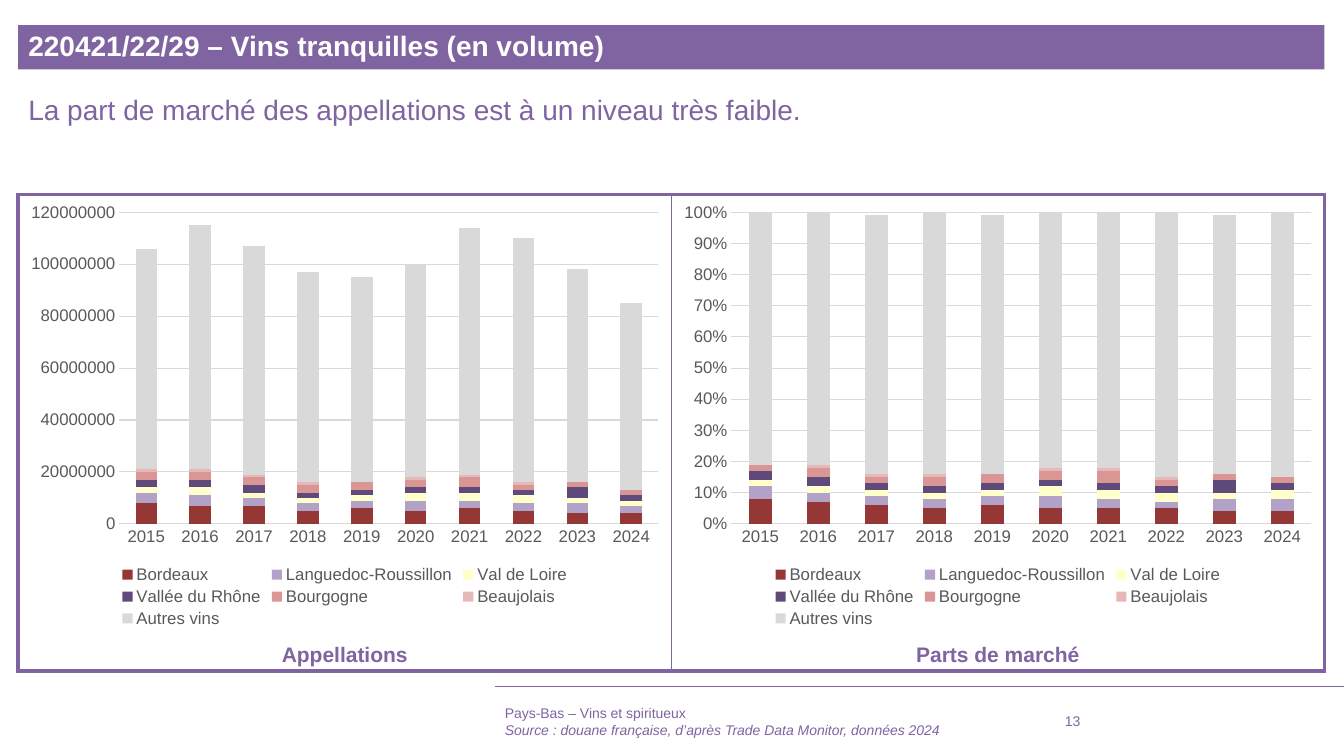
from lxml.etree import SubElement
from pptx import Presentation
from pptx.chart.data import CategoryChartData as ChartData
from pptx.dml.color import RGBColor
from pptx.enum.chart import XL_CHART_TYPE as ChartType, XL_LEGEND_POSITION as LegendPosition, XL_TICK_MARK as TickMark
from pptx.enum.shapes import MSO_CONNECTOR as Connector
from pptx.enum.text import MSO_ANCHOR as Anchor, MSO_AUTO_SIZE as AutoSize, PP_ALIGN as Align
from pptx.oxml.ns import qn
from pptx.util import Pt


class Theme:
    font = "Arial"
    purple = RGBColor.from_string("8064A2")
    white = RGBColor.from_string("FFFFFF")
    axis_text = RGBColor.from_string("595959")
    grid = RGBColor.from_string("D9D9D9")
    heading, caption, chart, footer = Pt(20), Pt(15), Pt(12), Pt(10)


def set_font(font, size, color, bold=False):
    font.name, font.size, font.bold = Theme.font, size, bold
    font.color.rgb = color


def write(box, place, lines, size, color, bold=False, align=Align.LEFT, anchor=Anchor.MIDDLE):
    box.left, box.top, box.width, box.height = (Pt(value) for value in place)
    frame = box.text_frame
    frame.text = "\n".join(lines)
    frame.word_wrap = True
    frame.auto_size = AutoSize.NONE
    frame.vertical_anchor = anchor
    for para in frame.paragraphs:
        para.alignment = align
        for span in para.runs:
            set_font(span.font, size, color, bold)
    return frame


LEFT, TOP, HALF = 13, 139, 466.5
FRAME_HEIGHT, CHART_HEIGHT = 340.5, 312
FOOTER_LEFT, FOOTER_TOP, FOOTER_HEIGHT = 353.5, 500.5, 29

deck = Presentation()
deck.slide_width, deck.slide_height = Pt(960), Pt(540)
page = deck.slides.add_slide(deck.slide_layouts[1])

title = page.shapes.title
title.fill.solid()
title.fill.fore_color.rgb = Theme.purple
title_frame = write(title, (LEFT, 18, 2 * HALF, 31.5), ["220421/22/29 – Vins tranquilles (en volume)"],
                    Theme.heading, Theme.white, bold=True)
message_frame = write(page.placeholders[1], (LEFT, 65, 2 * HALF, 58),
                      ["La part de marché des appellations est à un niveau très faible."],
                      Theme.heading, Theme.purple, anchor=Anchor.TOP)
for frame in (title_frame, message_frame):
    para = frame.paragraphs[0]
    para.line_spacing = 0.9
    para.space_before = Pt(0)
properties = message_frame.paragraphs[0]._p.get_or_add_pPr()
properties.set("marL", "0")
properties.set("indent", "0")
SubElement(properties, qn("a:buNone"))

rule = page.shapes.add_connector(Connector.STRAIGHT, Pt(960), Pt(490.5), Pt(FOOTER_LEFT), Pt(490.5))
rule.line.color.rgb = Theme.purple
rule.line.width = Pt(0.5)
SubElement(rule._element.spPr, qn("a:effectLst"))

table = page.shapes.add_table(1, 2, Pt(LEFT), Pt(TOP), Pt(2 * HALF), Pt(FRAME_HEIGHT)).table
table.first_row = table.horz_banding = False
for column, (left_width, right_width) in enumerate([(3, 1), (1, 3)]):
    cell = table.cell(0, column)
    cell_properties = cell._tc.get_or_add_tcPr()
    for side, width in zip("LRTB", (left_width, right_width, 3, 3)):
        border = SubElement(cell_properties, qn(f"a:ln{side}"), w=str(Pt(width)))
        SubElement(SubElement(border, qn("a:solidFill")), qn("a:srgbClr"), val=str(Theme.purple))
    cell.fill.background()

YEARS = [str(year) for year in range(2015, 2025)]
REGIONS = [
    ("Bordeaux", "953735", [8, 7, 7, 5, 6, 5, 6, 5, 4, 4], [8, 7, 6, 5, 6, 5, 5, 5, 4, 4]),
    ("Languedoc-Roussillon", "B3A2C7", [4, 4, 3, 3, 3, 4, 3, 3, 4, 3], [4, 3, 3, 3, 3, 4, 3, 2, 4, 4]),
    ("Val de Loire", "FFFFCC", [2, 3, 2, 2, 2, 3, 3, 3, 2, 2], [2, 2, 2, 2, 2, 3, 3, 3, 2, 3]),
    ("Vallée du Rhône", "604A7B", [3, 3, 3, 2, 2, 2, 2, 2, 4, 2], [3, 3, 2, 2, 2, 2, 2, 2, 4, 2]),
    ("Bourgogne", "D99694", [3, 3, 3, 3, 3, 3, 4, 2, 2, 2], [2, 3, 2, 3, 3, 3, 4, 2, 2, 2]),
    ("Beaujolais", "E6B9B8", [1, 1, 1, 1, 0, 1, 1, 1, 0, 0], [0, 1, 1, 1, 0, 1, 1, 1, 0, 0]),
    ("Autres vins", "D9D9D9", [85, 94, 88, 81, 79, 82, 95, 94, 82, 72],
     [81, 82, 83, 84, 83, 82, 83, 86, 83, 85]),
]
PANELS = [
    ("Appellations", 2, lambda millions: millions * 1_000_000, 120_000_000, 20_000_000, "General"),
    ("Parts de marché", 3, lambda percent: percent / 100, 1, 0.1, "0%"),
]

for index, (caption, source, scale, maximum, step, number_format) in enumerate(PANELS):
    left = LEFT + index * HALF
    data = ChartData(number_format=number_format)
    data.categories = YEARS
    for region in REGIONS:
        data.add_series(region[0], [scale(value) for value in region[source]])
    chart = page.shapes.add_chart(ChartType.COLUMN_STACKED, Pt(left), Pt(TOP), Pt(HALF),
                                  Pt(CHART_HEIGHT), data).chart
    set_font(chart.font, Theme.chart, Theme.axis_text)
    chart.has_title = False
    chart.has_legend = True
    chart.legend.position = LegendPosition.BOTTOM
    chart.legend.include_in_layout = False
    set_font(chart.legend.font, Theme.chart, Theme.axis_text)

    plot = chart.plots[0]
    plot.gap_width, plot.overlap, plot.vary_by_categories = 150, 100, False
    for series, region in zip(plot.series, REGIONS):
        series.format.fill.solid()
        series.format.fill.fore_color.rgb = RGBColor.from_string(region[1])

    years_axis, values_axis = chart.category_axis, chart.value_axis
    for axis in (years_axis, values_axis):
        axis.major_tick_mark = axis.minor_tick_mark = TickMark.NONE
        set_font(axis.tick_labels.font, Theme.chart, Theme.axis_text)
    values_axis.minimum_scale, values_axis.maximum_scale, values_axis.major_unit = 0, maximum, step
    values_axis.tick_labels.number_format = number_format
    values_axis.tick_labels.number_format_is_linked = False
    values_axis.format.line.fill.background()
    for line in (years_axis.format.line, values_axis.major_gridlines.format.line):
        line.color.rgb = Theme.grid
        line.width = Pt(0.75)

    write(page.shapes.add_textbox(0, 0, 0, 0), (left, 454.5, HALF, 25), [caption],
          Theme.caption, Theme.purple, bold=True, align=Align.CENTER, anchor=Anchor.TOP)

footer_frame = write(page.shapes.add_textbox(0, 0, 0, 0), (FOOTER_LEFT, FOOTER_TOP, 391, FOOTER_HEIGHT),
                     ["Pays-Bas – Vins et spiritueux",
                      "Source : douane française, d’après Trade Data Monitor, données 2024"],
                     Theme.footer, Theme.purple)
footer_frame.paragraphs[1].runs[0].font.italic = True
write(page.shapes.add_textbox(0, 0, 0, 0), (753.5, FOOTER_TOP, 71.5, FOOTER_HEIGHT), ["13"],
      Theme.footer, Theme.purple)

deck.save("out.pptx")
